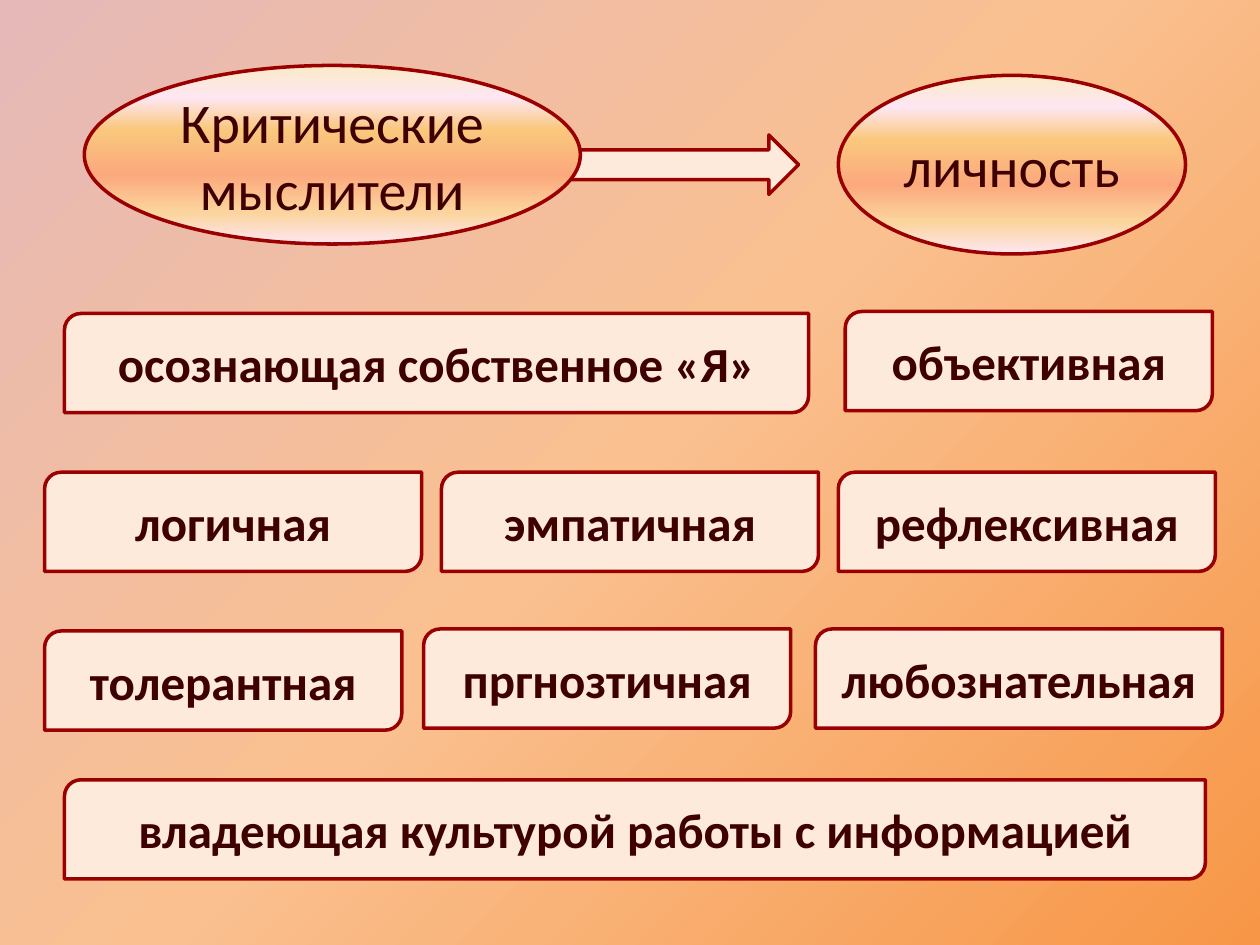
import pptx
import pptx.util
import pptx.dml.color
import pptx.enum.shapes
import pptx.enum.text
import pptx.oxml
import pptx.oxml.ns

RGB = pptx.dml.color.RGBColor
KIND = pptx.enum.shapes.MSO_SHAPE
DARK = RGB(0x3E, 0x00, 0x00)
RED = RGB(0x9A, 0x00, 0x00)
CREAM = RGB(0xFD, 0xEA, 0xDA)
PINK = RGB(0xFE, 0xE7, 0xF2)
GLOW = [(0, RGB(0xFB, 0xEA, 0xC7)), (18, PINK), (36, RGB(0xFA, 0xC7, 0x7D)),
        (61, RGB(0xFB, 0xA9, 0x7D)), (82, RGB(0xFB, 0xD4, 0x9C)), (100, PINK)]
DUSK = [(0, RGB(0xF7, 0x96, 0x46)), (50, RGB(0xFA, 0xC0, 0x90)),
        (100, RGB(0xE6, 0xB9, 0xB8))]
DOWN = '<a:lin ang="5400000" scaled="0"/>'
CORNER = ('<a:path path="circle"><a:fillToRect l="100000" t="100000"/></a:path>'
          '<a:tileRect r="-100000" b="-100000"/>')
UNIT = pptx.util.Mm(2)  # side of one grid cell


def blend(node, stops, way):
    """Swap the solid fill directly under node for a gradient."""
    marks = "".join(f'<a:gs pos="{at * 1000}"><a:srgbClr val="{tint}"/></a:gs>'
                    for at, tint in stops)
    grad = pptx.oxml.parse_xml(
        f'<a:gradFill {pptx.oxml.ns.nsdecls("a")} rotWithShape="1">'
        f'<a:gsLst>{marks}</a:gsLst>{way}</a:gradFill>')
    node.replace(node.find(pptx.oxml.ns.qn("a:solidFill")), grad)


def draw(kind, left, top, wide, high, text="", **style):
    """Add an outlined shape, placed in grid cells."""
    cells = [round(n * UNIT) for n in (left, top, wide, high)]
    shape = slide.shapes.add_shape(kind, *cells)
    shape.shadow.inherit = False
    shape.fill.solid()
    shape.fill.fore_color.rgb = CREAM
    shape.line.color.rgb = RED
    shape.line.width = pptx.util.Pt(2)
    if text:
        frame = shape.text_frame
        frame.word_wrap = True
        frame.vertical_anchor = pptx.enum.text.MSO_ANCHOR.MIDDLE
        para = frame.paragraphs[0]
        para.alignment = pptx.enum.text.PP_ALIGN.CENTER
        run = para.add_run()
        run.text = text
        run.font.color.rgb = DARK
        for name, value in style.items():
            setattr(run.font, name, value)
    return shape


deck = pptx.Presentation()
deck.slide_width = pptx.util.Inches(10)
deck.slide_height = pptx.util.Inches(7.5)
slide = deck.slides.add_slide(deck.slide_layouts[6])
slide.background.fill.solid()
blend(slide.element.find(".//" + pptx.oxml.ns.qn("p:bgPr")), DUSK, CORNER)

# The thinkers overlap the tail of the arrow, so they come after it
head = {"size": pptx.util.Pt(32), "name": "Calibri"}
trait = {"size": pptx.util.Pt(28), "name": "Calibri", "bold": True}
draw(KIND.RIGHT_ARROW, 55.5, 13.6, 25, 6)
for left, top, wide, text in [(84.5, 7.6, 35, "личность"),
                              (8.5, 6.6, 50, "Критические мыслители")]:
    oval = draw(KIND.OVAL, left, top, wide, 18, text, **head)
    blend(oval.element.spPr, GLOW, DOWN)

# Traits: left, top, width, text
traits = [
    (6.5, 31.6, 75, "осознающая собственное «Я»"),
    (85.2, 31.4, 37, "объективная"),
    (4.5, 47.6, 38, "логичная"),
    (44.5, 47.6, 38, "эмпатичная"),
    (84.5, 47.6, 38, "рефлексивная"),
    (4.5, 63.6, 36, "толерантная"),
    (42.7, 63.4, 37, "пргнозтичная"),
    (82.2, 63.4, 41, "любознательная"),
    (6.5, 78.6, 115, "владеющая культурой работы с информацией"),
]
for left, top, wide, text in traits:
    draw(KIND.ROUND_2_DIAG_RECTANGLE, left, top, wide, 10, text, **trait)

deck.save("out.pptx")
